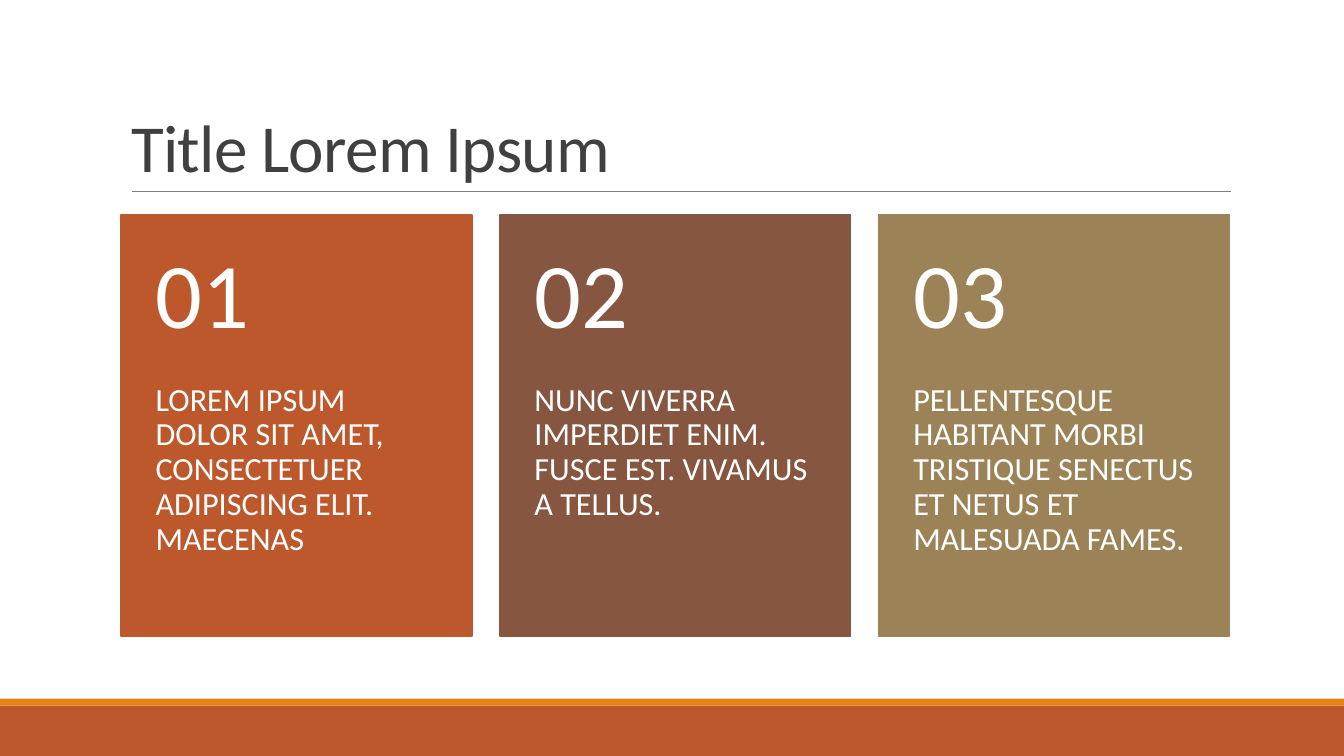
from lxml.etree import SubElement
from pptx import Presentation
from pptx.dml.color import RGBColor
from pptx.enum.shapes import MSO_CONNECTOR, MSO_SHAPE
from pptx.enum.text import MSO_ANCHOR, MSO_AUTO_SIZE, PP_ALIGN
from pptx.oxml.ns import qn
from pptx.util import Pt

COLORS = {
    "rust": "BD582C", "orange": "E48312", "brown": "865640",
    "olive": "9B8357", "rule": "808080", "title": "404040", "white": "FFFFFF",
}


def rgb(name):
    return RGBColor.from_string(COLORS[name])


def write(sp, text, size, color="white", anchor=MSO_ANCHOR.TOP,
          margins=(7.2, 3.6, 7.2, 3.6), spacing=0.9, tracking=0):
    tf = sp.text_frame
    tf.word_wrap = True
    tf.auto_size = MSO_AUTO_SIZE.NONE
    tf.vertical_anchor = anchor
    tf.margin_left, tf.margin_top, tf.margin_right, tf.margin_bottom = map(Pt, margins)
    p = tf.paragraphs[0]
    p.alignment = PP_ALIGN.LEFT
    p.line_spacing = spacing
    r = p.add_run()
    r.text = text
    r.font.name = "Calibri"
    r.font.size = Pt(size)
    r.font.color.rgb = rgb(color)
    if tracking:
        r.font._element.set("spc", str(int(tracking * 100)))


prs = Presentation()
prs.slide_width, prs.slide_height = Pt(960), Pt(540)
s = prs.slides.add_slide(prs.slide_layouts[5])

# Title
sp = s.shapes.title
sp.left, sp.top, sp.width, sp.height = Pt(86.4), Pt(22.5), Pt(792), Pt(114.2)
write(sp, "Title Lorem Ipsum", 48, color="title", anchor=MSO_ANCHOR.BOTTOM,
      spacing=0.85, tracking=-0.5)

# Rule under the title
line = s.shapes.add_connector(MSO_CONNECTOR.STRAIGHT, Pt(94.2), Pt(136.8), Pt(879), Pt(136.8))
line.line.color.rgb = rgb("rule")
line.line.width = Pt(0.5)
SubElement(line._element.spPr, qn("a:effectLst"))

# Footer bands
for top, height, color in [(504, 36, "rust"), (499, 5, "orange")]:
    sp = s.shapes.add_shape(MSO_SHAPE.RECTANGLE, 0, Pt(top), prs.slide_width, Pt(height))
    sp.shadow.inherit = False
    sp.fill.solid()
    sp.fill.fore_color.rgb = rgb(color)
    sp.line.fill.background()

# Numbered cards
CARD_LEFT, CARD_TOP, CARD_WIDTH, CARD_PITCH = 86.4, 153.4, 250.6, 270.6
NUMBER_HEIGHT, BODY_HEIGHT = 120.4, 180.6
cards = [
    ("rust", "LOREM IPSUM DOLOR SIT AMET, CONSECTETUER ADIPISCING ELIT. MAECENAS"),
    ("brown", "NUNC VIVERRA IMPERDIET ENIM. FUSCE EST. VIVAMUS A TELLUS."),
    ("olive", "PELLENTESQUE HABITANT MORBI TRISTIQUE SENECTUS ET NETUS ET MALESUADA FAMES."),
]
for i, (color, text) in enumerate(cards):
    left, width = Pt(CARD_LEFT + i * CARD_PITCH), Pt(CARD_WIDTH)
    sp = s.shapes.add_shape(MSO_SHAPE.RECTANGLE, left, Pt(CARD_TOP), width,
                            Pt(NUMBER_HEIGHT + BODY_HEIGHT))
    sp.shadow.inherit = False
    sp.fill.solid()
    sp.fill.fore_color.rgb = rgb(color)
    sp.line.color.rgb = rgb(color)
    sp.line.width = Pt(1.25)

    body = s.shapes.add_textbox(left, Pt(CARD_TOP + NUMBER_HEIGHT), width, Pt(BODY_HEIGHT))
    write(body, text, 23, margins=(24.75, 0, 24.75, 26))
    number = s.shapes.add_textbox(left, Pt(CARD_TOP), width, Pt(NUMBER_HEIGHT))
    write(number, f"{i + 1:02d}", 66, anchor=MSO_ANCHOR.MIDDLE,
          margins=(24.75, 13, 24.75, 13))

prs.save("out.pptx")
